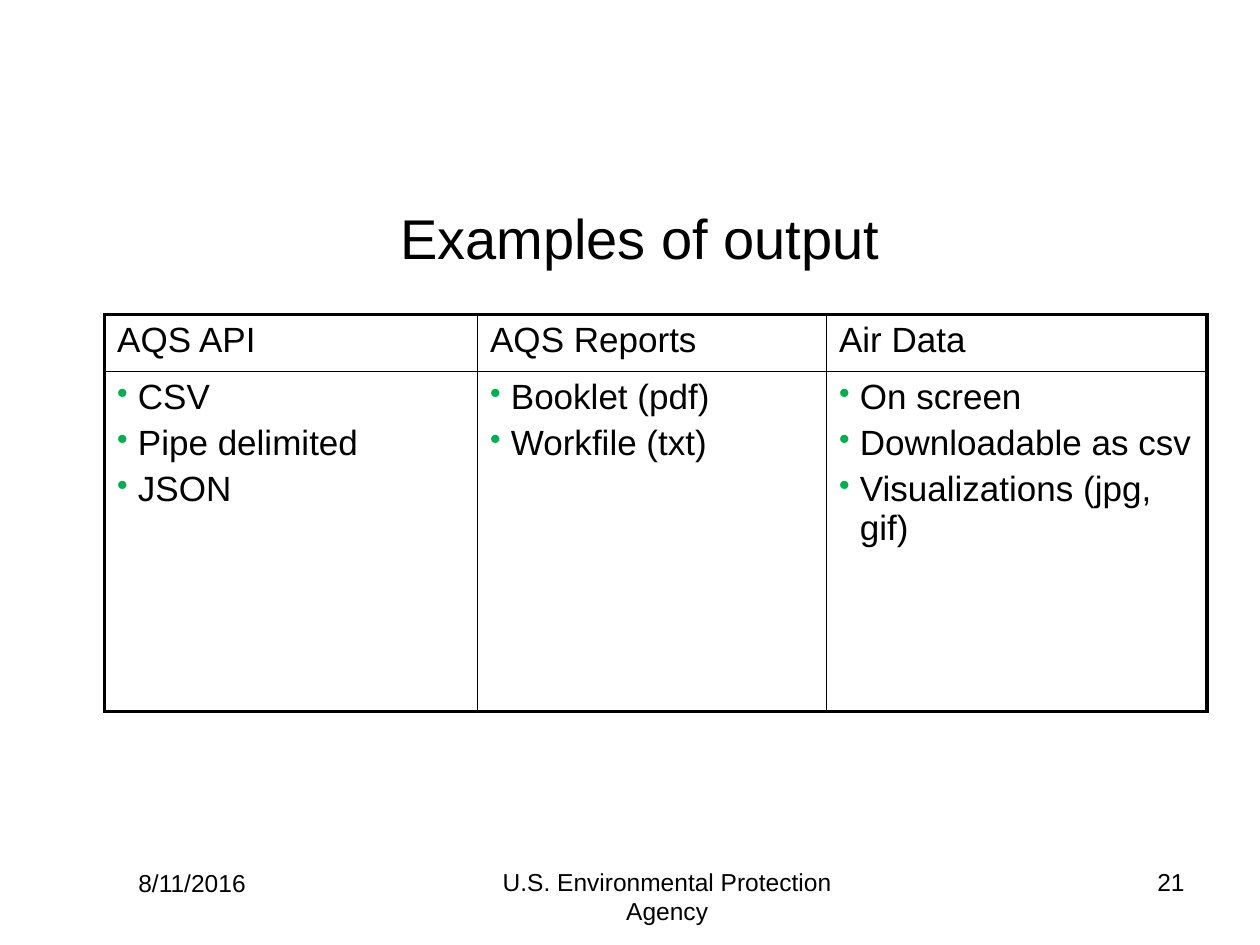
from dataclasses import dataclass

from lxml import etree
from pptx import Presentation
from pptx.dml.color import RGBColor
from pptx.enum.text import MSO_ANCHOR, PP_ALIGN
from pptx.oxml.ns import qn
from pptx.util import Emu, Inches, Pt

LEFT, MID, RIGHT = PP_ALIGN.LEFT, PP_ALIGN.CENTER, PP_ALIGN.RIGHT
TOP, CORE = MSO_ANCHOR.TOP, MSO_ANCHOR.MIDDLE
WIDE, HIGH = Inches(10), Inches(7.5)


@dataclass(frozen=True)
class Theme:
    font: str = "Arial"
    ink: str = "000000"
    dot: str = "00B050"
    title: int = 32
    body: int = 20
    foot: int = 14
    gap: int = 4
    thick: float = 2.25
    thin: float = 1
    hang: float = 0.165


THEME = Theme()
GRID = (
    ("AQS API", ("CSV", "Pipe delimited", "JSON")),
    ("AQS Reports", ("Booklet (pdf)", "Workfile (txt)")),
    ("Air Data", ("On screen", "Downloadable as csv", "Visualizations (jpg, gif)")),
)
COLS = (0.296, 0.277, 0.302)
ROWS = (0.06, 0.36)


def place(x, y, w, h):
    return [Emu(round(n)) for n in (x * WIDE, y * HIGH, w * WIDE, h * HIGH)]


def style(para, size, align=LEFT):
    para.alignment = align
    for run in para.runs:
        run.font.name = THEME.font
        run.font.size = Pt(size)
        run.font.color.rgb = RGBColor.from_string(THEME.ink)


def add_text(slide, text, box, size, align, anchor=TOP):
    frame = slide.shapes.add_textbox(*place(*box)).text_frame
    frame.word_wrap = True
    frame.vertical_anchor = anchor
    frame.text = text
    style(frame.paragraphs[0], size, align)


def add_dot(para):
    props = para._p.get_or_add_pPr()
    hang = Inches(THEME.hang)
    props.set("marL", str(hang))
    props.set("indent", str(-hang))
    tint = etree.SubElement(props, qn("a:buClr"))
    etree.SubElement(tint, qn("a:srgbClr"), val=THEME.dot)
    etree.SubElement(props, qn("a:buSzPct"), val="90000")
    etree.SubElement(props, qn("a:buChar"), char="•")


def add_edges(cell, outer):
    props = cell._tc.get_or_add_tcPr()
    for side in "LRTB":
        width = Pt(THEME.thick if side in outer else THEME.thin)
        line = etree.SubElement(props, qn("a:ln" + side), w=str(width))
        fill = etree.SubElement(line, qn("a:solidFill"))
        etree.SubElement(fill, qn("a:srgbClr"), val=THEME.ink)
    cell.fill.background()


def fill_cell(cell, lines, dots):
    frame = cell.text_frame
    frame.text = "\n".join(lines)
    for i, para in enumerate(frame.paragraphs):
        if dots:
            add_dot(para)
        if i:
            para.space_before = Pt(THEME.gap)
        style(para, THEME.body)


def add_grid(slide):
    box = place(0.083, 0.333, sum(COLS), sum(ROWS))
    table = slide.shapes.add_table(len(ROWS), len(COLS), *box).table
    table.first_row = table.horz_banding = False
    for row, share in zip(table.rows, ROWS):
        row.height = Emu(round(share * HIGH))
    for c, (head, items) in enumerate(GRID):
        table.columns[c].width = Emu(round(COLS[c] * WIDE))
        sides = {0: "L", len(COLS) - 1: "R"}.get(c, "")
        for r, lines in enumerate(((head,), items)):
            cell = table.cell(r, c)
            add_edges(cell, sides + "TB"[r])
            fill_cell(cell, lines, r > 0)


def main():
    deck = Presentation()
    deck.slide_width, deck.slide_height = WIDE, HIGH
    slide = deck.slides.add_slide(deck.slide_layouts[6])
    add_text(slide, "Examples of output", (0.083, 0.167, 0.85, 0.167),
             THEME.title, MID, CORE)
    add_grid(slide)
    feet = (
        ("8/11/2016", 0.1, 0.912, 0.217, LEFT),
        ("U.S. Environmental Protection Agency", 0.367, 0.911, 0.325, MID),
        ("21", 0.742, 0.911, 0.208, RIGHT),
    )
    for text, x, y, w, align in feet:
        add_text(slide, text, (x, y, w, 0.067), THEME.foot, align)
    deck.save("out.pptx")


if __name__ == "__main__":
    main()
